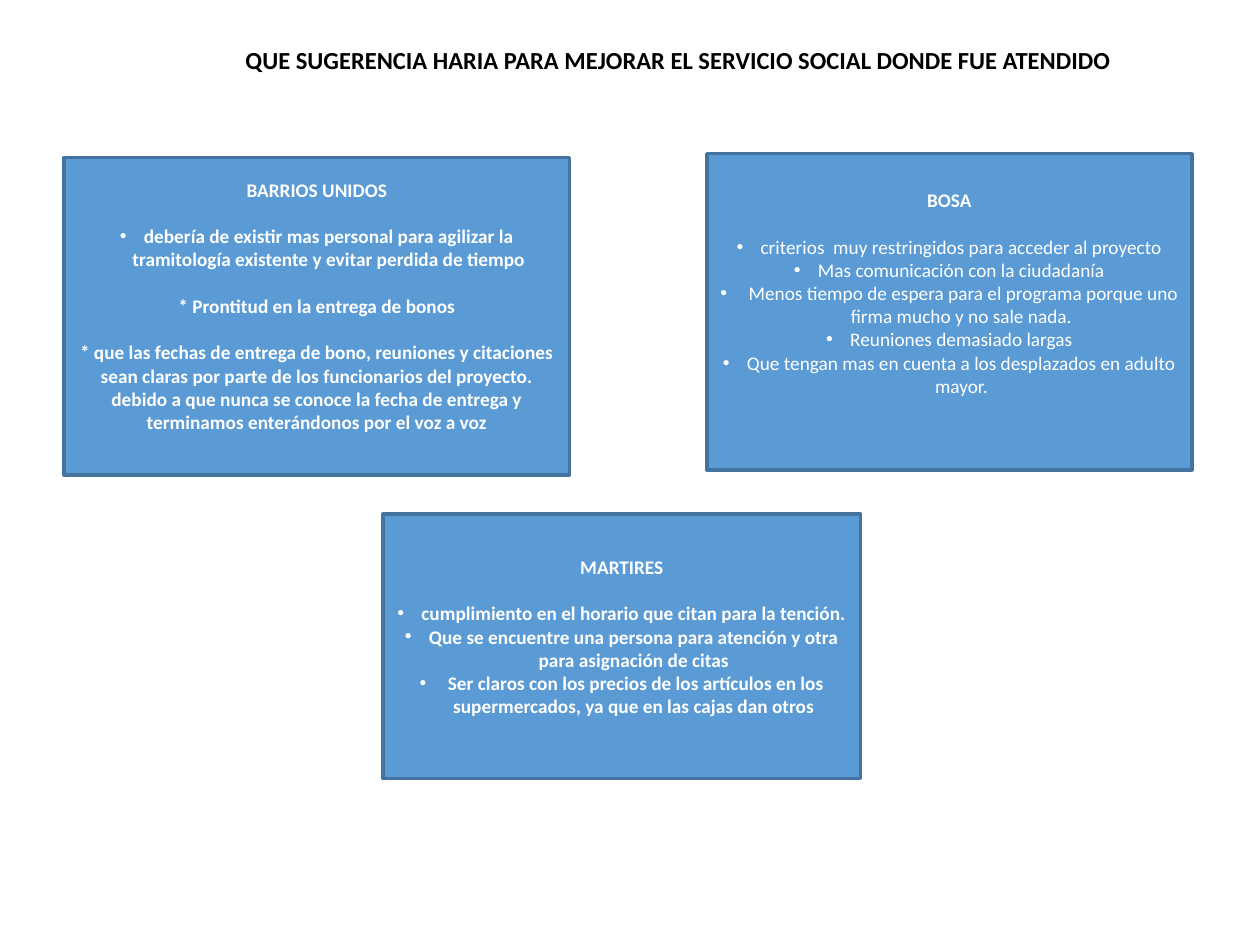
"""Build a slide of suggestions for improving the social service, by district."""
from dataclasses import dataclass

from lxml import etree
from pptx import Presentation
from pptx import util as u
from pptx.dml.color import RGBColor
from pptx.enum import shapes, text
from pptx.oxml.ns import qn


@dataclass(frozen=True)
class Theme:
    font: str = "Calibri"
    fill: str = "5B9BD5"
    edge: str = "43739E"
    light: str = "FFFFFF"
    dark: str = "000000"
    head: float = 14
    body: float = 11
    gap: float = 13.4
    line: float = 2
    dent: float = 0.19


@dataclass(frozen=True)
class Item:
    words: str
    mark: bool = True
    bold: bool = True
    gap: bool = False


@dataclass(frozen=True)
class Card:
    left: float
    top: float
    width: float
    height: float
    foot: float
    items: tuple[Item, ...]


LOOK = Theme()

CARDS = (
    Card(0.51, 1.25, 4.01, 2.52, 0.22, (
        Item("BARRIOS UNIDOS", mark=False),
        Item("debería de existir mas personal para agilizar la tramitología "
             "existente y evitar perdida de tiempo", gap=True),
        Item("* Prontitud en la entrega de bonos", mark=False, gap=True),
        Item("* que las fechas de entrega de bono, reuniones y citaciones sean "
             "claras por parte de los funcionarios del proyecto. debido a que "
             "nunca se conoce la fecha de entrega y terminamos enterándonos "
             "por el voz a voz", mark=False, gap=True),
    )),
    Card(5.61, 1.22, 3.85, 2.51, 0.35, (
        Item("BOSA", mark=False),
        Item("criterios  muy restringidos para acceder al proyecto",
             bold=False, gap=True),
        Item("Mas comunicación con la ciudadanía", bold=False),
        Item(" Menos tiempo de espera para el programa porque uno firma mucho "
             "y no sale nada.", bold=False),
        Item("Reuniones demasiado largas", bold=False),
        Item("Que tengan mas en cuenta a los desplazados en adulto mayor.",
             bold=False),
    )),
    Card(3.04, 4.08, 3.79, 2.1, 0.21, (
        Item("MARTIRES", mark=False),
        Item("cumplimiento en el horario que citan para la tención.", gap=True),
        Item("Que se encuentre una persona para atención y otra para "
             "asignación de citas"),
        Item(" Ser claros con los precios de los artículos en los "
             "supermercados, ya que en las cajas dan otros"),
    )),
)


def add_run(para, words: str, size: float, color: str, bold: bool) -> None:
    run = para.add_run()
    run.text = words
    font = run.font
    font.name, font.size, font.bold = LOOK.font, u.Pt(size), bold
    font.color.rgb = RGBColor.from_string(color)


def add_mark(para) -> None:
    props = para._p.get_or_add_pPr()
    dent = u.Inches(LOOK.dent)
    props.set("marL", str(dent))
    props.set("indent", str(-dent))
    etree.SubElement(props, qn("a:buFont")).set("typeface", "Arial")
    etree.SubElement(props, qn("a:buChar")).set("char", "•")


def add_card(slide, card: Card) -> None:
    box = slide.shapes.add_shape(
        shapes.MSO_SHAPE.RECTANGLE, u.Inches(card.left), u.Inches(card.top),
        u.Inches(card.width), u.Inches(card.height))
    box.shadow.inherit = False
    box.fill.solid()
    box.fill.fore_color.rgb = RGBColor.from_string(LOOK.fill)
    box.line.color.rgb = RGBColor.from_string(LOOK.edge)
    box.line.width = u.Pt(LOOK.line)
    frame = box.text_frame
    frame.word_wrap = True
    frame.vertical_anchor = text.MSO_ANCHOR.MIDDLE
    frame.margin_bottom = u.Inches(card.foot)
    for pos, item in enumerate(card.items):
        para = frame.add_paragraph() if pos else frame.paragraphs[0]
        if item.mark:
            add_mark(para)
        para.alignment = text.PP_ALIGN.CENTER
        if item.gap:
            para.space_before = u.Pt(LOOK.gap)
        add_run(para, item.words, LOOK.body, LOOK.light, item.bold)


def add_title(slide, words: str) -> None:
    box = slide.shapes.add_textbox(
        u.Inches(1.85), u.Inches(0.31), u.Inches(7.33), u.Inches(0.34))
    frame = box.text_frame
    frame.word_wrap = True
    frame.auto_size = text.MSO_AUTO_SIZE.SHAPE_TO_FIT_TEXT
    add_run(frame.paragraphs[0], words, LOOK.head, LOOK.dark, True)


def main() -> None:
    deck = Presentation()
    deck.slide_width, deck.slide_height = u.Inches(10), u.Inches(7.5)
    slide = deck.slides.add_slide(deck.slide_layouts[6])
    for card in CARDS:
        add_card(slide, card)
    add_title(slide, "QUE SUGERENCIA HARIA PARA MEJORAR EL SERVICIO SOCIAL "
                     "DONDE FUE ATENDIDO")
    deck.save("out.pptx")


if __name__ == "__main__":
    main()
